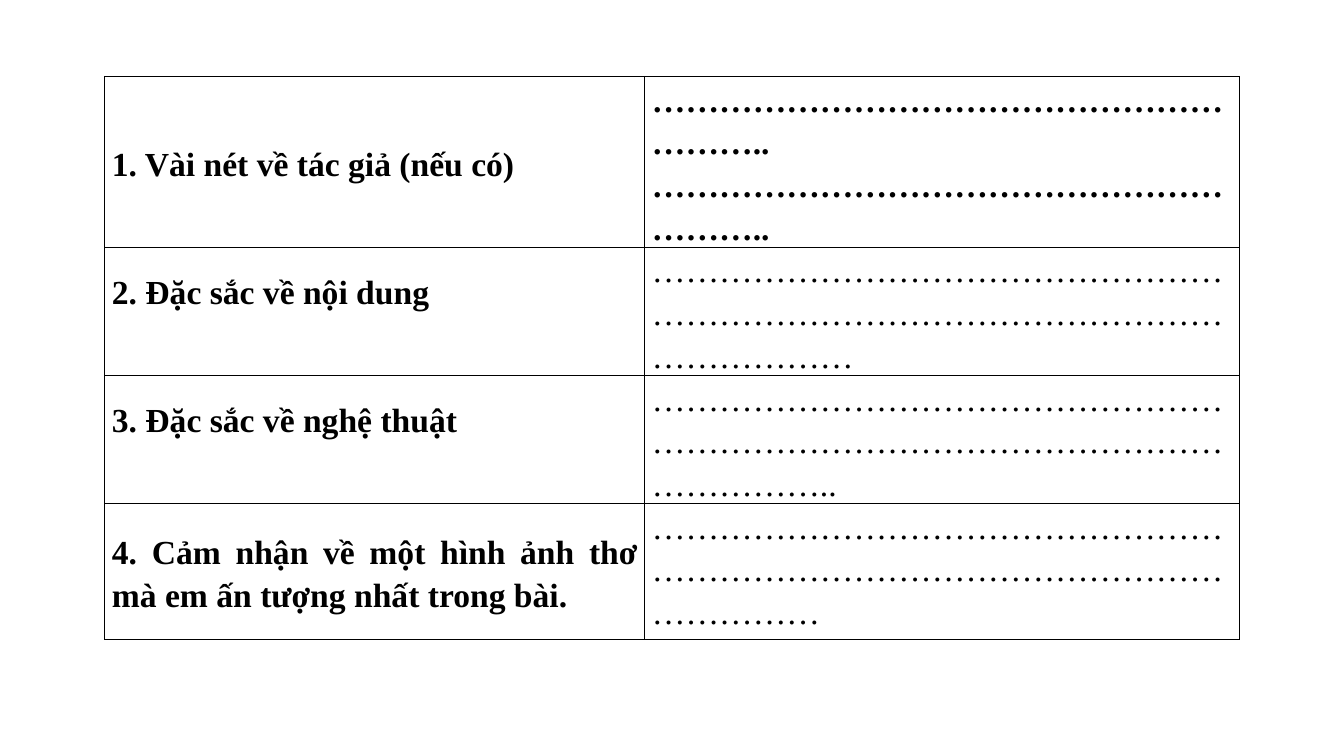
from lxml import etree
from pptx import Presentation
from pptx.dml.color import RGBColor
from pptx.enum.text import MSO_ANCHOR, PP_ALIGN
from pptx.oxml.ns import qn
from pptx.util import Cm, Pt

MIDDLE, TOP = MSO_ANCHOR.MIDDLE, MSO_ANCHOR.TOP
LEFT, JUSTIFY = PP_ALIGN.LEFT, PP_ALIGN.JUSTIFY
FONT, SIZE, BLACK = "Times New Roman", 24, "000000"
LINE_SPACING = 1.15
SIDE_MARGIN = 0.18
LINE_ROOM = 1.08  # one text line kept free below a heading

# heading, alignment, room below, answer lines, bold answer, row height (cm)
ROWS = [
    ("1. Vài nét về tác giả (nếu có)", LEFT, 0,
     ["…" * 20 + ".."] * 2, True, 3.51),
    ("2. Đặc sắc về nội dung", LEFT, LINE_ROOM,
     ["…" * 40], False, 2.97),
    ("3. Đặc sắc về nghệ thuật", JUSTIFY, LINE_ROOM,
     ["…" * 39 + ".."], False, 2.69),
    ("4. Cảm nhận về một hình ảnh thơ mà em ấn tượng nhất trong bài.", JUSTIFY, 0,
     ["…" * 39], False, 3.43),
]
COL_WIDTHS = [13.61, 14.99]
TABLE_LEFT, TABLE_TOP = 2.64, 1.93


def rgb(color):
    return RGBColor.from_string(color)


def set_borders(cell, color, width):
    tc_pr = cell._tc.get_or_add_tcPr()
    for i, side in enumerate(("a:lnL", "a:lnR", "a:lnT", "a:lnB")):
        ln = etree.Element(qn(side), w=str(Pt(width)))
        fill = etree.SubElement(ln, qn("a:solidFill"))
        etree.SubElement(fill, qn("a:srgbClr"), val=color)
        tc_pr.insert(i, ln)


def fill_cell(cell, lines, bold, anchor, align=LEFT, room_below=0):
    cell.fill.background()
    set_borders(cell, BLACK, 1)
    cell.margin_left = cell.margin_right = Cm(SIDE_MARGIN)
    cell.margin_top, cell.margin_bottom = Cm(0), Cm(room_below)
    cell.vertical_anchor = anchor
    tf = cell.text_frame
    for i, line in enumerate(lines):
        p = tf.add_paragraph() if i else tf.paragraphs[0]
        p.alignment, p.line_spacing = align, LINE_SPACING
        r = p.add_run()
        r.text = line
        r.font.name, r.font.size, r.font.bold = FONT, Pt(SIZE), bold
        r.font.color.rgb = rgb(BLACK)


prs = Presentation()
prs.slide_width, prs.slide_height = Cm(33.87), Cm(19.05)
s = prs.slides.add_slide(prs.slide_layouts[6])

table = s.shapes.add_table(
    len(ROWS), len(COL_WIDTHS), Cm(TABLE_LEFT), Cm(TABLE_TOP),
    Cm(sum(COL_WIDTHS)), Cm(sum(row[-1] for row in ROWS))).table
table.first_row = table.horz_banding = False
for column, width in zip(table.columns, COL_WIDTHS):
    column.width = Cm(width)
for i, (heading, align, room, answer, bold, height) in enumerate(ROWS):
    table.rows[i].height = Cm(height)
    fill_cell(table.cell(i, 0), [heading], True, MIDDLE, align, room)
    fill_cell(table.cell(i, 1), answer, bold, TOP)

prs.save("out.pptx")
